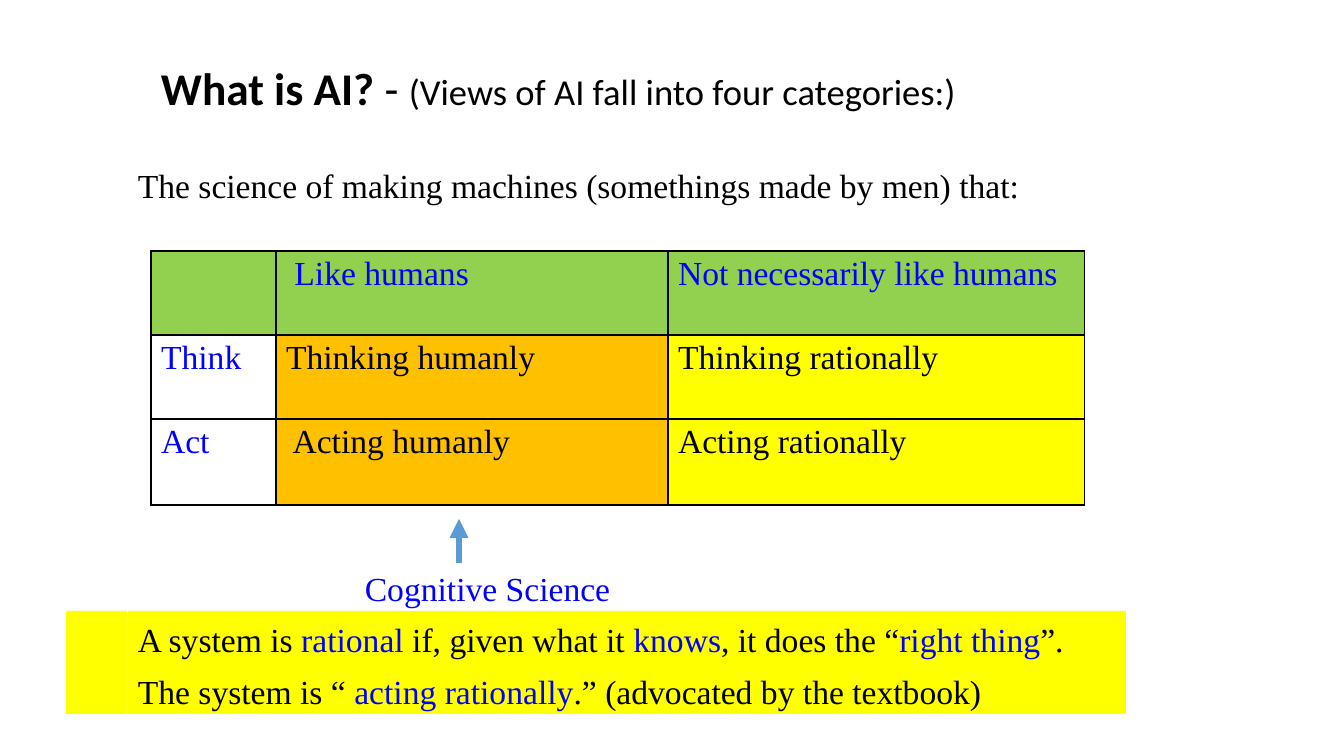
from typing import NamedTuple

from lxml import etree
from pptx import Presentation
from pptx.dml.color import RGBColor
from pptx.enum.shapes import MSO_CONNECTOR, MSO_SHAPE
from pptx.enum.text import MSO_ANCHOR, PP_ALIGN
from pptx.oxml.ns import qn
from pptx.util import Emu, Pt

RECTANGLE = MSO_SHAPE.RECTANGLE
STRAIGHT = MSO_CONNECTOR.STRAIGHT
TOP, MIDDLE = MSO_ANCHOR.TOP, MSO_ANCHOR.MIDDLE
LEFT = PP_ALIGN.LEFT

BLACK = RGBColor(0x00, 0x00, 0x00)
WHITE = RGBColor(0xFF, 0xFF, 0xFF)
BLUE = RGBColor(0x00, 0x00, 0xFF)
YELLOW = RGBColor(0xFF, 0xFF, 0x00)
ORANGE = RGBColor(0xFF, 0xC0, 0x00)
GREEN = RGBColor(0x92, 0xD0, 0x50)
ARROW_BLUE = RGBColor(0x5B, 0x9B, 0xD5)

SERIF = "Times New Roman"
SANS = "Calibri"
PX_PER_INCH = 100.8


class Area(NamedTuple):
    left: int
    top: int
    width: int
    height: int


class Span(NamedTuple):
    text: str
    color: RGBColor = BLACK
    size: float = 24
    font: str = SERIF
    bold: bool = False


class Line(NamedTuple):
    spans: list[Span]
    space_before: int = 0
    indent: int = 0


class Entry(NamedTuple):
    text: str
    color: RGBColor = BLACK
    fill: RGBColor | None = None


TITLE_AREA = Area(151, 62, 1002, 58)
BAND_AREA = Area(66, 611, 1060, 103)
BODY_AREA = Area(128, 164, 1018, 573)
TABLE_AREA = Area(151, 251, 934, 254)
COLUMN_WIDTHS = [125, 392, 417]
ROW_HEIGHTS = [84, 84, 86]

TITLE = [Line([
    Span("What is AI? ", size=32.4, font=SANS, bold=True),
    Span("- ", size=32.4, font=SANS),
    Span("(Views of AI fall into four categories:)", size=26.1, font=SANS),
])]

BODY = [
    Line([Span("The science of making machines (somethings made by men) that:")]),
    Line([Span("Cognitive Science", BLUE)], space_before=262, indent=227),
    Line([
        Span("A system is "), Span("rational", BLUE),
        Span(" if, given what it "), Span("knows", BLUE),
        Span(", it does the “"), Span("right thing", BLUE), Span("”."),
    ], space_before=11),
    Line([
        Span("The system is “ "), Span("acting rationally", BLUE),
        Span(".” (advocated by the textbook)"),
    ], space_before=11),
]

CATEGORIES = [
    [Entry("", fill=GREEN), Entry(" Like humans", BLUE, GREEN),
     Entry("Not necessarily like humans", BLUE, GREEN)],
    [Entry("Think", BLUE), Entry("Thinking humanly", fill=ORANGE),
     Entry("Thinking rationally", fill=YELLOW)],
    [Entry("Act", BLUE), Entry(" Acting humanly", fill=ORANGE),
     Entry("Acting rationally", fill=YELLOW)],
]


def px(length: int) -> Emu:
    return Emu(round(length * 914400 / PX_PER_INCH))


def add_span(para, text: str, *, color: RGBColor, size: float, font: str, bold: bool) -> None:
    run = para.add_run()
    run.text = text
    run.font.name = font
    run.font.size = Pt(size)
    run.font.bold = bold
    run.font.color.rgb = color


def write_lines(frame, lines: list[Line], anchor=TOP) -> None:
    frame.word_wrap = True
    frame.vertical_anchor = anchor
    for index, line in enumerate(lines):
        para = frame.add_paragraph() if index else frame.paragraphs[0]
        para.alignment = LEFT
        para.line_spacing = 0.9
        para.space_before = Pt(line.space_before)
        if line.indent:
            para._p.get_or_add_pPr().set("marL", str(px(line.indent)))
        for span in line.spans:
            add_span(para, **span._asdict())


def add_box(page, area: Area, fill: RGBColor | None = None, outline: RGBColor | None = None):
    box = page.shapes.add_shape(RECTANGLE, *map(px, area))
    box.shadow.inherit = False
    if fill is None:
        box.fill.background()
    else:
        box.fill.solid()
        box.fill.fore_color.rgb = fill
    if outline is None:
        box.line.fill.background()
    else:
        box.line.color.rgb = outline
        box.line.width = Pt(0.75)
    return box


def add_borders(cell) -> None:
    properties = cell._tc.get_or_add_tcPr()
    for index, side in enumerate(("a:lnL", "a:lnR", "a:lnT", "a:lnB")):
        border = etree.Element(qn(side), w=str(Pt(1)))
        solid = etree.SubElement(border, qn("a:solidFill"))
        etree.SubElement(solid, qn("a:srgbClr"), val=str(BLACK))
        properties.insert(index, border)


def add_categories(page) -> None:
    frame = page.shapes.add_table(len(CATEGORIES), len(COLUMN_WIDTHS), *map(px, TABLE_AREA))
    table = frame.table
    table.first_row = False
    table.horz_banding = False
    for column, width in zip(table.columns, COLUMN_WIDTHS):
        column.width = px(width)
    for row, height, entries in zip(table.rows, ROW_HEIGHTS, CATEGORIES):
        row.height = px(height)
        for cell, entry in zip(row.cells, entries):
            if entry.fill is None:
                cell.fill.background()
            else:
                cell.fill.solid()
                cell.fill.fore_color.rgb = entry.fill
            if entry.text:
                span = Span(entry.text, entry.color)
                add_span(cell.text_frame.paragraphs[0], **span._asdict())
            add_borders(cell)


def add_arrow(page, x: int, start: int, end: int) -> None:
    arrow = page.shapes.add_connector(STRAIGHT, px(x), px(start), px(x), px(end))
    arrow.line.color.rgb = ARROW_BLUE
    arrow.line.width = Pt(4.5)
    etree.SubElement(arrow.line._get_or_add_ln(), qn("a:tailEnd"), type="triangle")
    etree.SubElement(arrow._element.spPr, qn("a:effectLst"))


def main() -> None:
    deck = Presentation()
    deck.slide_width, deck.slide_height = px(1344), px(756)
    page = deck.slides.add_slide(deck.slide_layouts[6])

    # Highlight behind the definition
    add_box(page, BAND_AREA, fill=YELLOW)

    # Title and body text
    title = page.shapes.add_textbox(*map(px, TITLE_AREA))
    write_lines(title.text_frame, TITLE, MIDDLE)
    body = add_box(page, BODY_AREA, outline=WHITE)
    write_lines(body.text_frame, BODY)

    # Four categories, with the arrow up to the human column
    add_categories(page)
    add_arrow(page, 459, 563, 519)

    deck.save("out.pptx")


if __name__ == "__main__":
    main()
